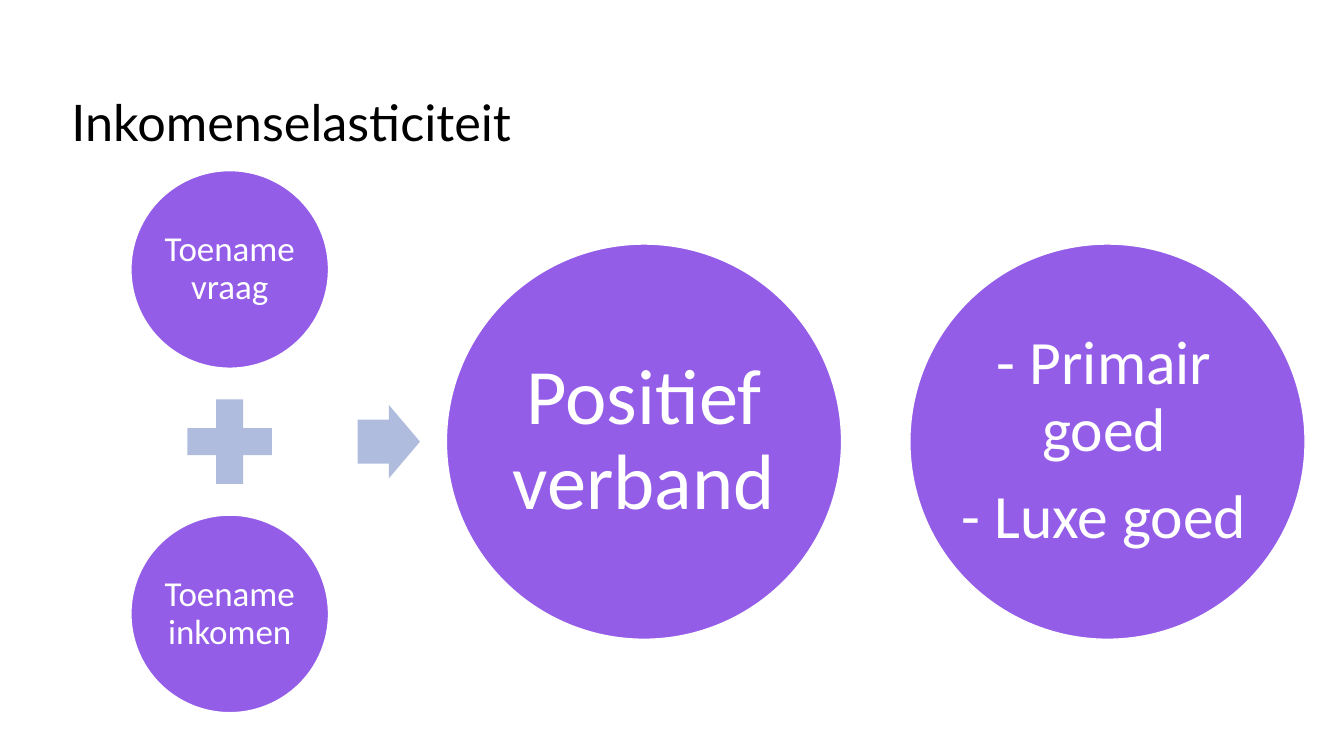
from pptx import Presentation
from pptx.dml.color import RGBColor
from pptx.enum.shapes import MSO_SHAPE
from pptx.enum.text import MSO_ANCHOR, PP_ALIGN
from pptx.util import Cm, Pt

OVAL, PLUS, ARROW = MSO_SHAPE.OVAL, MSO_SHAPE.MATH_PLUS, MSO_SHAPE.RIGHT_ARROW
LEFT, CENTER = PP_ALIGN.LEFT, PP_ALIGN.CENTER
TOP, MIDDLE = MSO_ANCHOR.TOP, MSO_ANCHOR.MIDDLE

PURPLE = RGBColor(0x94, 0x5D, 0xE8)
PALE = RGBColor(0xB0, 0xBC, 0xDE)
WHITE = RGBColor(0xFF, 0xFF, 0xFF)
BLACK = RGBColor(0, 0, 0)

MID = 11.13     # height of the row's centre line, cm
SMALL, BIG = 4.98, 9.96


class Deck:
    font = "Calibri"

    def __init__(self, slide):
        self.shapes = slide.shapes

    def fill_text(self, frame, lines, size, inset):
        """Centred white text, one paragraph per line."""
        frame.word_wrap = True
        frame.vertical_anchor = MIDDLE
        frame.margin_left = frame.margin_right = Cm(inset)
        frame.margin_top = frame.margin_bottom = Cm(inset)
        for i, line in enumerate(lines):
            para = frame.add_paragraph() if i else frame.paragraphs[0]
            para.alignment = CENTER
            para.line_spacing = 0.9
            if i < len(lines) - 1:
                para.space_after = Pt(round(size * 0.35))
            self.add_run(para, line, size, self.font, WHITE)

    def add_run(self, para, text, size, font, color):
        run = para.add_run()
        run.text = text
        run.font.size = Pt(size)
        run.font.name = font
        run.font.color.rgb = color

    def title(self, text, x, y, w, h):
        frame = self.shapes.add_textbox(Cm(x), Cm(y), Cm(w), Cm(h)).text_frame
        frame.word_wrap = True
        frame.vertical_anchor = TOP
        para = frame.paragraphs[0]
        para.alignment = LEFT
        self.add_run(para, text, 36, "Lato", BLACK)

    def shape(self, kind, x, y, w, h, fill):
        """A plain shape around the centre x, y."""
        shape = self.shapes.add_shape(
            kind, Cm(x - w / 2), Cm(y - h / 2), Cm(w), Cm(h))
        shape.shadow.inherit = False
        shape.fill.solid()
        shape.fill.fore_color.rgb = fill
        shape.line.fill.background()
        return shape

    def circle(self, x, y, size):
        shape = self.shape(OVAL, x, y, size, size, PURPLE)
        shape.line.color.rgb = WHITE
        shape.line.width = Pt(1)
        return shape

    def label(self, lines, x, y, w, h, size, inset):
        box = self.shapes.add_textbox(
            Cm(x - w / 2), Cm(y - h / 2), Cm(w), Cm(h))
        self.fill_text(box.text_frame, lines, size, inset)


def main():
    prs = Presentation()
    prs.slide_width, prs.slide_height = Cm(33.87), Cm(19.05)
    deck = Deck(prs.slides.add_slide(prs.slide_layouts[6]))

    deck.title("Inkomenselasticiteit", 1.55, 2.18, 26.8, 3.33)

    # Two causes, above and below the plus sign
    left, step = 5.79, 4.34
    for side, text in ((-1, "Toename vraag"), (1, "Toename inkomen")):
        cause = deck.circle(left, MID + side * step, SMALL)
        deck.fill_text(cause.text_frame, [text], 25, 0.08)
    deck.shape(PLUS, left, MID, 2.9, 2.9, PALE)

    # Arrow to the result
    arrow = deck.shape(ARROW, 9.8, MID, 1.57, 1.85, PALE)
    arrow.adjustments[0] = 0.6
    arrow.adjustments[1] = 0.5
    result = deck.circle(16.23, MID, BIG)
    deck.fill_text(result.text_frame, ["Positief verband"], 56, 0.2)

    # Kinds of goods; the label is wider than the circle's text area
    deck.circle(27.91, MID, BIG)
    deck.label(["- Primair goed", "- Luxe goed"], 27.83, MID, 9.07, 7.04, 44, 0.2)

    prs.save("out.pptx")


if __name__ == "__main__":
    main()
